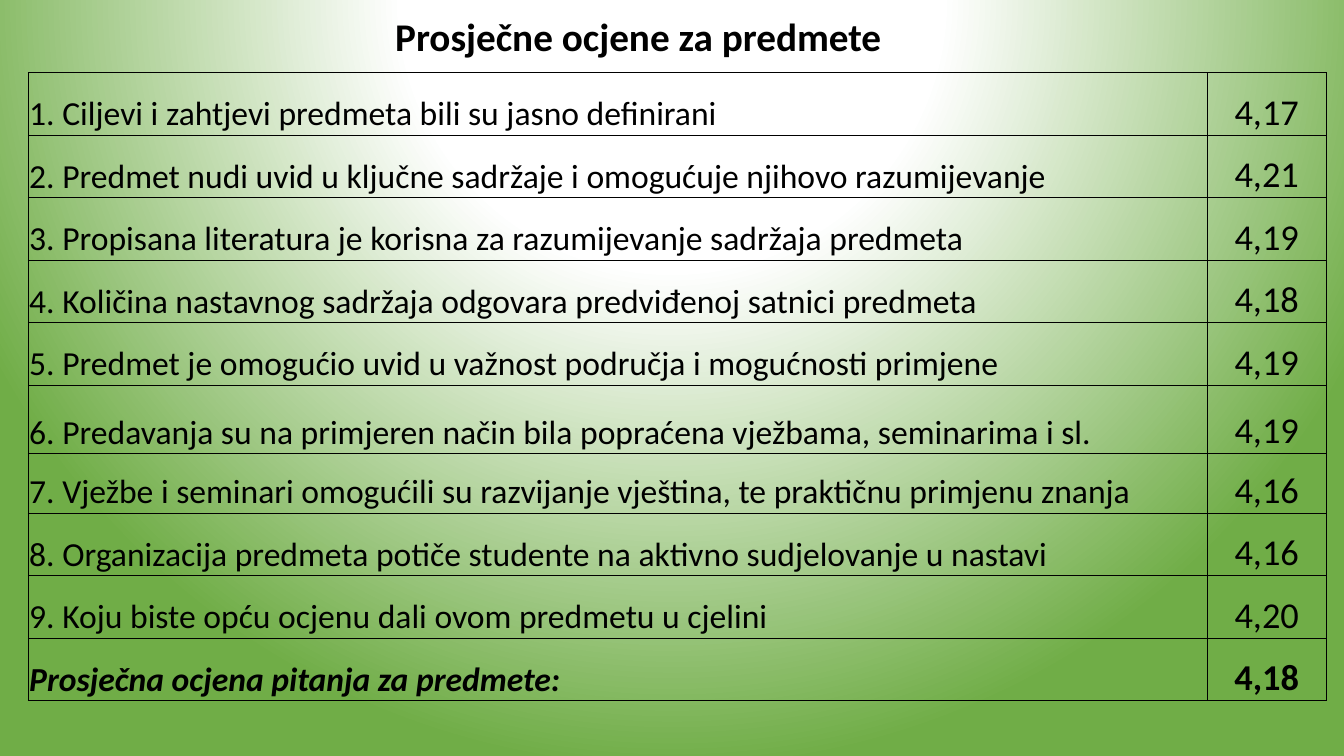
from pptx import Presentation
from pptx.dml.color import RGBColor
from pptx.enum.text import MSO_ANCHOR, MSO_AUTO_SIZE, PP_ALIGN
from pptx.oxml import parse_xml
from pptx.oxml.ns import nsdecls
from pptx.util import Inches, Pt

LEFT, CENTER = PP_ALIGN.LEFT, PP_ALIGN.CENTER
BOTTOM, MIDDLE = MSO_ANCHOR.BOTTOM, MSO_ANCHOR.MIDDLE
FIT_SHAPE = MSO_AUTO_SIZE.SHAPE_TO_FIT_TEXT
FONT, BLACK, WHITE, GREEN = "Calibri", "000000", "FFFFFF", "70AD47"
TITLE_ONLY = 5
ROW_HEIGHT = 0.62
ROW_HEIGHTS = {5: 0.68, 6: 0.59}
GRADES = [
    ("1. Ciljevi i zahtjevi predmeta bili su jasno definirani", "4,17"),
    ("2. Predmet nudi uvid u ključne sadržaje i omogućuje njihovo razumijevanje", "4,21"),
    ("3. Propisana literatura je korisna za razumijevanje sadržaja predmeta", "4,19"),
    ("4. Količina nastavnog sadržaja odgovara predviđenoj satnici predmeta", "4,18"),
    ("5. Predmet je omogućio uvid u važnost područja i mogućnosti primjene", "4,19"),
    ("6. Predavanja su na primjeren način bila popraćena vježbama, seminarima i sl.", "4,19"),
    ("7. Vježbe i seminari omogućili su razvijanje vještina, te praktičnu primjenu znanja", "4,16"),
    ("8. Organizacija predmeta potiče studente na aktivno sudjelovanje u nastavi", "4,16"),
    ("9. Koju biste opću ocjenu dali ovom predmetu u cjelini", "4,20"),
    ("Prosječna ocjena pitanja za predmete:", "4,18"),
]


def color(hex_value):
    """Return the colour for a hex string."""
    return RGBColor.from_string(hex_value)


def write(frame, text, size, align=LEFT, bold=False, italic=False):
    """Put one formatted line of text into a text frame."""
    paragraph = frame.paragraphs[0]
    paragraph.alignment = align
    run = paragraph.add_run()
    run.text = text
    font = run.font
    font.name, font.size = FONT, Pt(size)
    font.bold, font.italic = bold, italic
    font.color.rgb = color(BLACK)


def paint_background(slide):
    """Give the slide a white glow from above that fades to green."""
    stops = "".join(
        f'<a:gs pos="{percent * 1000}"><a:srgbClr val="{color(shade)}"/></a:gs>'
        for percent, shade in ((0, WHITE), (35, WHITE), (100, GREEN))
    )
    slide.element.cSld.insert(0, parse_xml(
        f'<p:bg {nsdecls("p", "a")}><p:bgPr><a:gradFill rotWithShape="1">'
        f'<a:gsLst>{stops}</a:gsLst><a:path path="circle">'
        '<a:fillToRect l="50000" t="-80000" r="50000" b="180000"/></a:path>'
        '</a:gradFill><a:effectLst/></p:bgPr></p:bg>'
    ))


def add_heading(slide, left, top, width, height):
    """Place the slide title in the given box."""
    heading = slide.shapes.title
    heading.left, heading.top = Inches(left), Inches(top)
    heading.width, heading.height = Inches(width), Inches(height)
    frame = heading.text_frame
    frame.word_wrap = False
    frame.auto_size = FIT_SHAPE
    frame.vertical_anchor = MIDDLE
    write(frame, "Prosječne ocjene za predmete", 28, bold=True)


def outline(cell):
    """Draw a thin black line on all four sides of a cell."""
    properties = cell._tc.get_or_add_tcPr()
    for side in "LRTB":
        properties.append(parse_xml(
            f'<a:ln{side} {nsdecls("a")} w="{Pt(0.5)}"><a:solidFill>'
            f'<a:srgbClr val="{color(BLACK)}"/></a:solidFill></a:ln{side}>'
        ))


def format_cell(cell):
    """Set the anchor, margins, borders and clear fill of a cell."""
    cell.vertical_anchor = BOTTOM
    cell.margin_left = cell.margin_right = cell.margin_top = Inches(0.01)
    cell.margin_bottom = 0
    outline(cell)
    cell.fill.background()


def add_grades(slide, left, top, width, height, grade_width=1.19):
    """Place the table of questions and average grades in the given box."""
    table = slide.shapes.add_table(
        len(GRADES), 2, Inches(left), Inches(top), Inches(width), Inches(height)
    ).table
    table.first_row = table.horz_banding = False
    table.columns[0].width = Inches(width - grade_width)
    table.columns[1].width = Inches(grade_width)
    for index, (question, grade) in enumerate(GRADES):
        table.rows[index].height = Inches(ROW_HEIGHTS.get(index, ROW_HEIGHT))
        is_total = index == len(GRADES) - 1
        question_cell, grade_cell = table.cell(index, 0), table.cell(index, 1)
        format_cell(question_cell)
        format_cell(grade_cell)
        write(question_cell.text_frame, question, 24, bold=is_total, italic=is_total)
        write(grade_cell.text_frame, grade, 26, align=CENTER, bold=is_total)


def main():
    """Build and save the slide."""
    deck = Presentation()
    deck.slide_width, deck.slide_height = Inches(13.33), Inches(7.5)
    slide = deck.slides.add_slide(deck.slide_layouts[TITLE_ONLY])
    paint_background(slide)
    add_grades(slide, 0.28, 0.72, 12.88, 6.25)
    add_heading(slide, 3.82, 0.07, 5.07, 0.57)
    deck.save("out.pptx")


if __name__ == "__main__":
    main()
